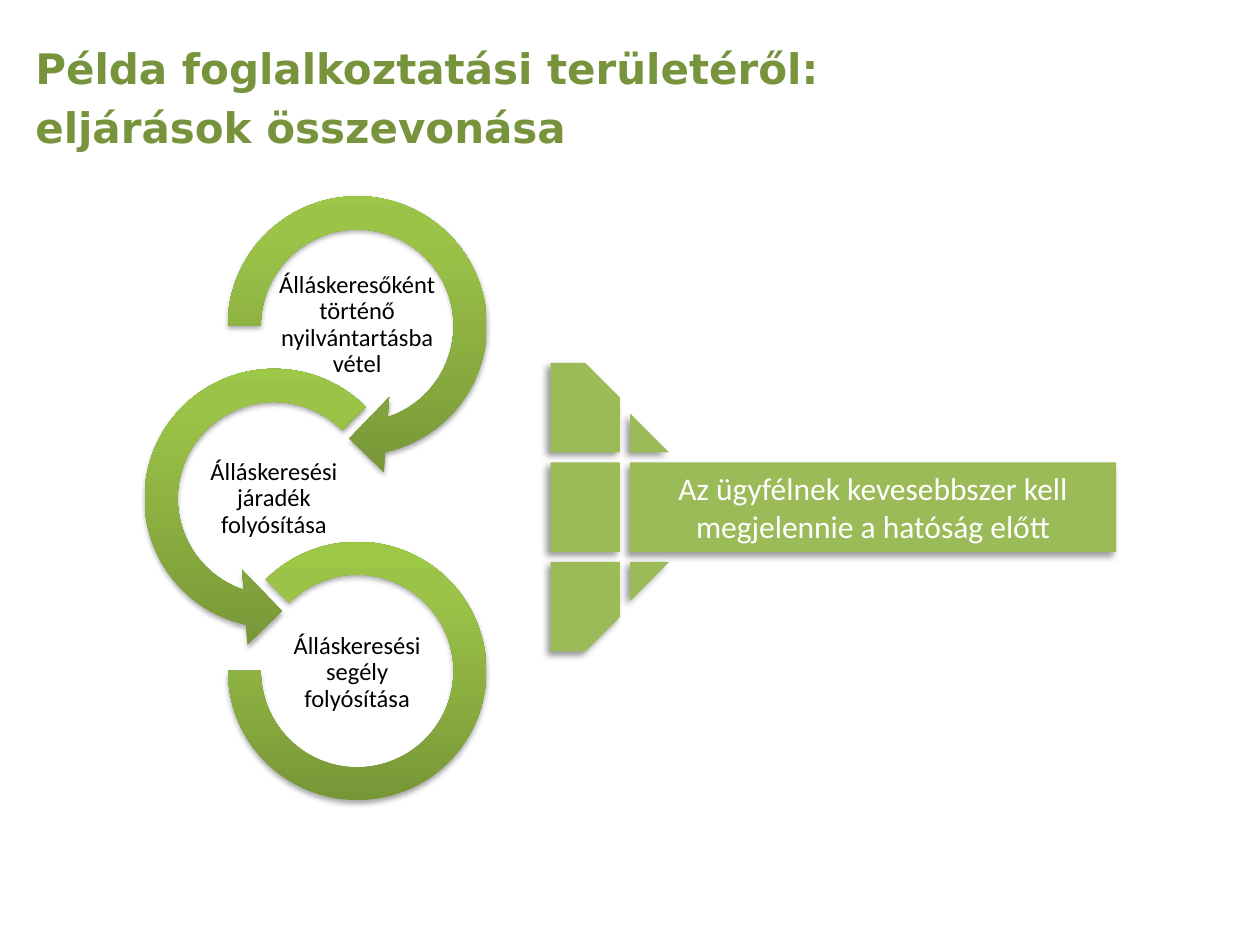
from pptx import Presentation, util as u
from pptx.dml.color import RGBColor
from pptx.enum import shapes, text
from pptx.oxml import parse_xml
from pptx.oxml.ns import nsdecls, qn

HUES = {"title": "77933C", "block": "9BBB59", "dark": "779737", "mid": "9BC348",
        "light": "9DC746", "ink": "000000", "paper": "FFFFFF"}
KIND = shapes.MSO_SHAPE

deck = Presentation()
deck.slide_width, deck.slide_height = u.Inches(10), u.Inches(7.5)
unit = deck.slide_width / 100  # one column or row of the grid
slide = deck.slides.add_slide(deck.slide_layouts[5])


def draw(group, kind, box, shade, adj=()):
    """Add an unlined shape; shade is opacity %, blur pt, distance pt, angle."""
    shape = group.shapes.add_shape(kind, *(round(n * unit) for n in box))
    for i, val in enumerate(adj):
        shape.adjustments[i] = val
    shape.fill.solid()
    shape.fill.fore_color.rgb = RGBColor.from_string(HUES["block"])
    shape.line.fill.background()
    shape.shadow.inherit = False
    alpha, blur, dist, turn = shade
    shape.element.spPr.find(qn("a:effectLst")).append(parse_xml(
        f'<a:outerShdw {nsdecls("a")} blurRad="{u.Pt(blur)}" dist="{u.Pt(dist)}" '
        f'dir="{turn * 60000}" rotWithShape="0"><a:srgbClr val="{HUES["ink"]}">'
        f'<a:alpha val="{alpha * 1000}"/></a:srgbClr></a:outerShdw>'))
    return shape


def write(frame, words, size, hue):
    frame.word_wrap = True
    frame.vertical_anchor = text.MSO_ANCHOR.MIDDLE
    para = frame.paragraphs[0]
    para.text = words
    para.alignment = text.PP_ALIGN.CENTER
    para.font.size, para.font.name = u.Pt(size), "Calibri"
    para.font.color.rgb = RGBColor.from_string(HUES[hue])
    return para


# Title
title = slide.shapes.title
title.left, title.top, title.width, title.height = (
    round(n * unit) for n in (-2, 2.9, 73.2, 11.8))
frame = title.text_frame
frame.auto_size = text.MSO_AUTO_SIZE.NONE
frame.vertical_anchor = text.MSO_ANCHOR.TOP
frame.text = "Példa foglalkoztatási területéről:\neljárások összevonása"
for para in frame.paragraphs:
    para.alignment = text.PP_ALIGN.LEFT
    props = para._p.get_or_add_pPr()
    props.set("marL", str(u.Inches(0.38)))
    props.set("indent", "0")
    para.font.size, para.font.name, para.font.bold = u.Pt(24), "DejaVu Sans", True
    para.font.color.rgb = RGBColor.from_string(HUES["title"])
frame.paragraphs[1].space_before = u.Pt(4.8)

# Chain of three procedures
chain = slide.shapes.add_group_shape()
steps = [
    (KIND.CIRCULAR_ARROW, (16.4, 13.9, 23.9, 23.9), (0.11, 11.42, 45, 108, 0.125),
     (21.7, 22.5), "Álláskeresőként történő nyilvántartásba vétel"),
    (KIND.LEFT_CIRCULAR_ARROW, (9.8, 27.6, 23.9, 23.9), (0.11, 11.42, 63, 189, 0.125),
     (15.1, 36.3), "Álláskeresési járadék folyósítása"),
    (KIND.BLOCK_ARC, (18.1, 43, 20.5, 20.5), (135, 108, 0.127),
     (21.7, 50.1), "Álláskeresési segély folyósítása"),
]
stops = "".join(f'<a:gs pos="{pos * 1000}"><a:srgbClr val="{HUES[hue]}"/></a:gs>'
                for pos, hue in ((0, "dark"), (80, "mid"), (100, "light")))
for kind, box, adj, spot, words in steps:
    ring = draw(chain, kind, box, (35, 3.1, 1.8, 90), adj)
    props = ring.element.spPr
    props.replace(props.find(qn("a:solidFill")), parse_xml(
        f'<a:gradFill {nsdecls("a")} rotWithShape="1"><a:gsLst>{stops}</a:gsLst>'
        '<a:lin ang="16200000" scaled="0"/></a:gradFill>'))
    label = chain.shapes.add_textbox(*(round(n * unit) for n in (*spot, 13.3, 6.6)))
    frame = label.text_frame
    frame.margin_left = frame.margin_right = u.Inches(0.01)
    frame.margin_top = frame.margin_bottom = u.Inches(0.01)
    write(frame, words, 14, "ink").line_spacing = 0.9

# Arrow of blocks: three rows, a narrow and a wide column
arrow = slide.shapes.add_group_shape()
shade = (40, 4, 3, 135)
left, wide, side = 43.7, 50, 3.1
high = 7.1
rows = [28.8 + 7.9 * i for i in range(3)]
snip, tip = KIND.SNIP_1_RECTANGLE, KIND.RIGHT_TRIANGLE
draw(arrow, snip, (left, rows[0], 5.5, high), shade, [0.5])
draw(arrow, KIND.RECTANGLE, (left, rows[1], 5.5, high), shade)
lower = [draw(arrow, snip, (left, rows[2], 5.5, high), shade, [0.5])]
result = draw(arrow, KIND.RECTANGLE, (wide, rows[1], 38.6, high), shade)
write(result.text_frame, "Az ügyfélnek kevesebbszer kell megjelennie a hatóság előtt",
      18, "paper")
draw(arrow, tip, (wide, rows[0] + high - side, side, side), shade)
lower.append(draw(arrow, tip, (wide, rows[2], side, side), shade))
for shape in lower:
    shape.rotation = 180
    shape.element.spPr.xfrm.set("flipH", "1")

deck.save("out.pptx")
